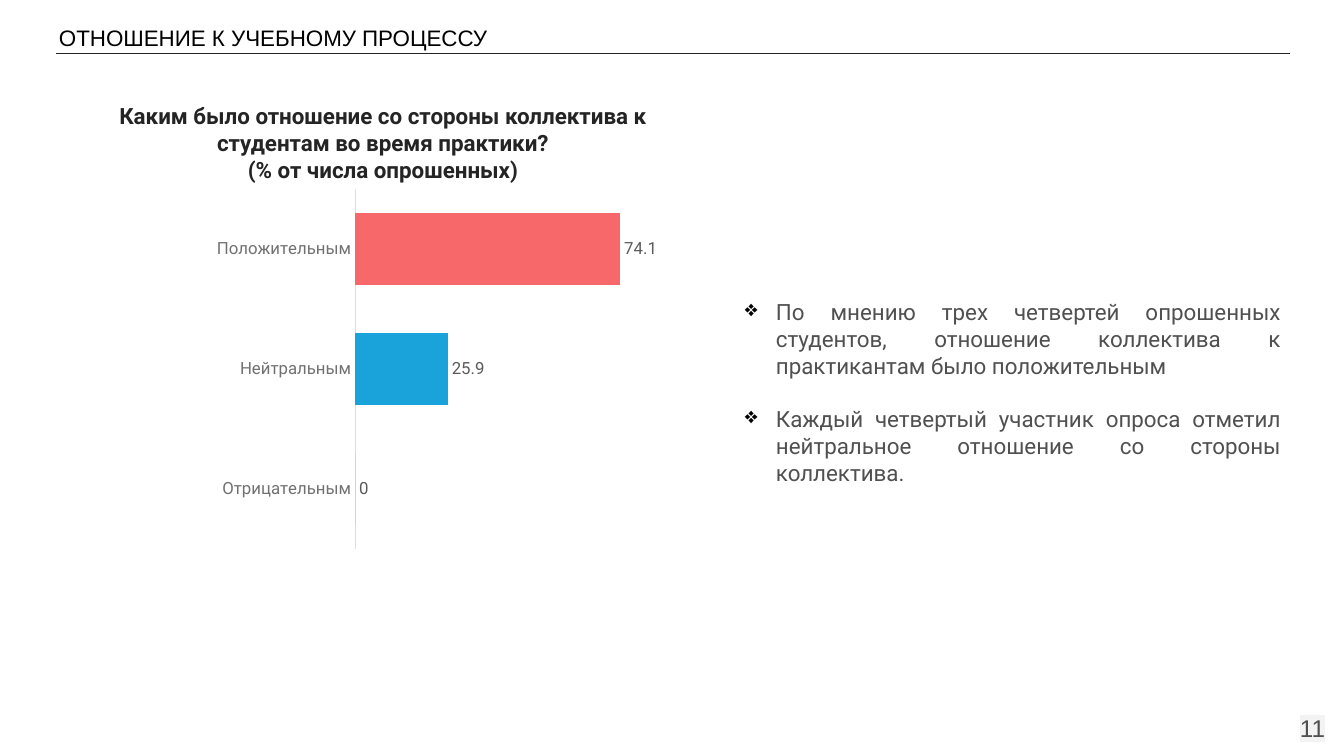
import pptx
import pptx.util
import pptx.dml.color
import pptx.chart.data
import pptx.enum.chart
import pptx.enum.text
import pptx.oxml
import pptx.oxml.ns

RGB = pptx.dml.color.RGBColor
INK = RGB(0x24, 0x24, 0x24)
BLACK = RGB(0, 0, 0)
GREY = RGB(0x50, 0x50, 0x50)
AXIS_TEXT = RGB(0x71, 0x71, 0x71)
AXIS_LINE = RGB(0xDE, 0xDE, 0xDE)
LABEL = RGB(0x5B, 0x5B, 0x5B)
MINT = RGB(0x62, 0xCF, 0xB5)
GREEN = RGB(0x36, 0xAF, 0x92)
BLUE = RGB(0x19, 0xA3, 0xDA)
CORAL = RGB(0xF7, 0x68, 0x6B)

HEADER = ["ОТНОШЕНИЕ К УЧЕБНОМУ ПРОЦЕССУ"]
TITLE = ["Каким было отношение со стороны коллектива к студентам во время практики?\v"
         "(% от числа опрошенных)"]
FINDINGS = [
    "По мнению трех четвертей опрошенных студентов, отношение коллектива к практикантам было положительным",
    "Каждый четвертый участник опроса отметил нейтральное отношение со стороны коллектива.",
]
PAGE = ["11"]
ATTITUDES = [("Отрицательным", 0, GREEN), ("Нейтральным", 25.9, BLUE), ("Положительным", 74.1, CORAL)]
PLOT = {"x": 0.48, "y": 0.04, "w": 0.45, "h": 0.9}

ALIGN = pptx.enum.text.PP_ALIGN
ANCHOR = pptx.enum.text.MSO_ANCHOR
HEADER_FONT = {"name": "Arial", "size": 16, "color": BLACK}
TITLE_FONT = {"name": "Roboto", "size": 16, "color": INK, "bold": True}
BODY_FONT = {"name": "Roboto", "size": 16, "color": GREY}
PAGE_FONT = {"name": "Arial", "size": 17.3, "color": GREY}
CHART_FONT = {"name": "Arial", "size": 10, "color": INK}
CATEGORY_FONT = {"name": "Roboto", "size": 12, "color": AXIS_TEXT}
LABEL_FONT = {"name": "Roboto", "size": 12, "color": LABEL}

TEXTS = [
    (TITLE, (58, 90, 650, 105), (10, 10, 10, 10), ALIGN.CENTER, ANCHOR.MIDDLE, TITLE_FONT),
    (PAGE, (1258, 699, 80, 57), (13, 13, 13, 13), ALIGN.RIGHT, ANCHOR.MIDDLE, PAGE_FONT),
    (FINDINGS, (732, 285, 562, 365), (13, 13, 13, 13), ALIGN.JUSTIFY, ANCHOR.TOP, BODY_FONT),
    (HEADER, (37, 19, 971, 37), (22, 5, 10, 5), ALIGN.LEFT, ANCHOR.TOP, HEADER_FONT),
]


def px(n):
    return pptx.util.Emu(round(n * 914400 / 100.8))


def set_font(font, fmt):
    for key, value in fmt.items():
        if key == "color":
            font.color.rgb = value
        else:
            setattr(font, key, pptx.util.Pt(value) if key == "size" else value)


def xml(markup):
    return pptx.oxml.parse_xml(markup.replace(">", " " + pptx.oxml.ns.nsdecls("a", "c") + ">", 1))


def add_text(slide, lines, box, insets, align, anchor, fmt):
    tf = slide.shapes.add_textbox(*map(px, box)).text_frame
    tf.word_wrap = True
    tf.vertical_anchor = anchor
    for side, inset in zip(("left", "top", "right", "bottom"), insets):
        setattr(tf, "margin_" + side, px(inset))
    for i, line in enumerate(lines):
        p = tf.add_paragraph() if i else tf.paragraphs[0]
        p.text = line
        p.alignment = align
        if i:
            p.space_before = pptx.util.Pt(19)
        for r in p.runs:
            set_font(r.font, fmt)
    return tf


def add_bullets(tf):
    for p in tf.paragraphs:
        pPr = p._p.get_or_add_pPr()
        pPr.set("marL", str(px(31)))
        pPr.set("indent", str(px(-31)))
        pPr.append(xml(f'<a:buClr><a:srgbClr val="{BLACK}"/></a:buClr>'))
        pPr.append(xml('<a:buChar char="❖"></a:buChar>'))


def add_chart(slide):
    data = pptx.chart.data.CategoryChartData()
    data.categories = [name for name, _, _ in ATTITUDES]
    data.add_series("Series 1", [value for _, value, _ in ATTITUDES])
    chart = slide.shapes.add_chart(pptx.enum.chart.XL_CHART_TYPE.BAR_CLUSTERED,
                                   px(50), px(173), px(636), px(400), data).chart
    set_font(chart.font, CHART_FONT)
    chart.has_legend = chart.has_title = False

    axis = chart.category_axis
    axis.major_tick_mark = axis.minor_tick_mark = pptx.enum.chart.XL_TICK_MARK.NONE
    set_font(axis.tick_labels.font, CATEGORY_FONT)
    axis.format.line.color.rgb = AXIS_LINE
    axis.format.line.width = pptx.util.Pt(0.75)
    for key, value in {"visible": False, "has_major_gridlines": False,
                       "minimum_scale": 0, "maximum_scale": 80}.items():
        setattr(chart.value_axis, key, value)

    plot = chart.plots[0]
    plot.gap_width = 66
    plot.vary_by_categories = False
    series = plot.series[0]
    series.format.fill.solid()
    series.format.fill.fore_color.rgb = MINT
    for i, (_, _, color) in enumerate(ATTITUDES):
        fill = series.points[i].format.fill
        fill.solid()
        fill.fore_color.rgb = color
    labels = series.data_labels
    labels.show_value = True
    labels.position = pptx.enum.chart.XL_LABEL_POSITION.OUTSIDE_END
    set_font(labels.font, LABEL_FONT)

    modes = "".join(f'<c:{k}Mode val="edge"/>' for k in "xy")
    sizes = "".join(f'<c:{k} val="{v}"/>' for k, v in PLOT.items())
    area = chart._chartSpace.chart.plotArea
    for old in area.findall(pptx.oxml.ns.qn("c:layout")):
        area.remove(old)
    area.insert(0, xml('<c:layout><c:manualLayout><c:layoutTarget val="inner"/>'
                       f'{modes}{sizes}</c:manualLayout></c:layout>'))


def main():
    prs = pptx.Presentation()
    prs.slide_width, prs.slide_height = px(1344), px(756)
    slide = prs.slides.add_slide(prs.slide_layouts[6])

    rule = slide.shapes.add_connector(pptx.enum.shapes.MSO_CONNECTOR.STRAIGHT,
                                      px(56), px(54), px(1290), px(54))
    rule.line.color.rgb = INK
    rule.line.width = pptx.util.Pt(0.75)
    rule._element.spPr.append(xml("<a:effectLst></a:effectLst>"))

    add_chart(slide)
    for text in TEXTS:
        tf = add_text(slide, *text)
        if text[0] is FINDINGS:
            add_bullets(tf)
        elif text[0] is PAGE:
            rPr = tf.paragraphs[0].runs[0].font._element
            fill = rPr.find(pptx.oxml.ns.qn("a:solidFill"))
            fill.addnext(xml('<a:highlight><a:srgbClr val="F3F3F3"/></a:highlight>'))

    prs.save("out.pptx")


if __name__ == "__main__":
    main()
